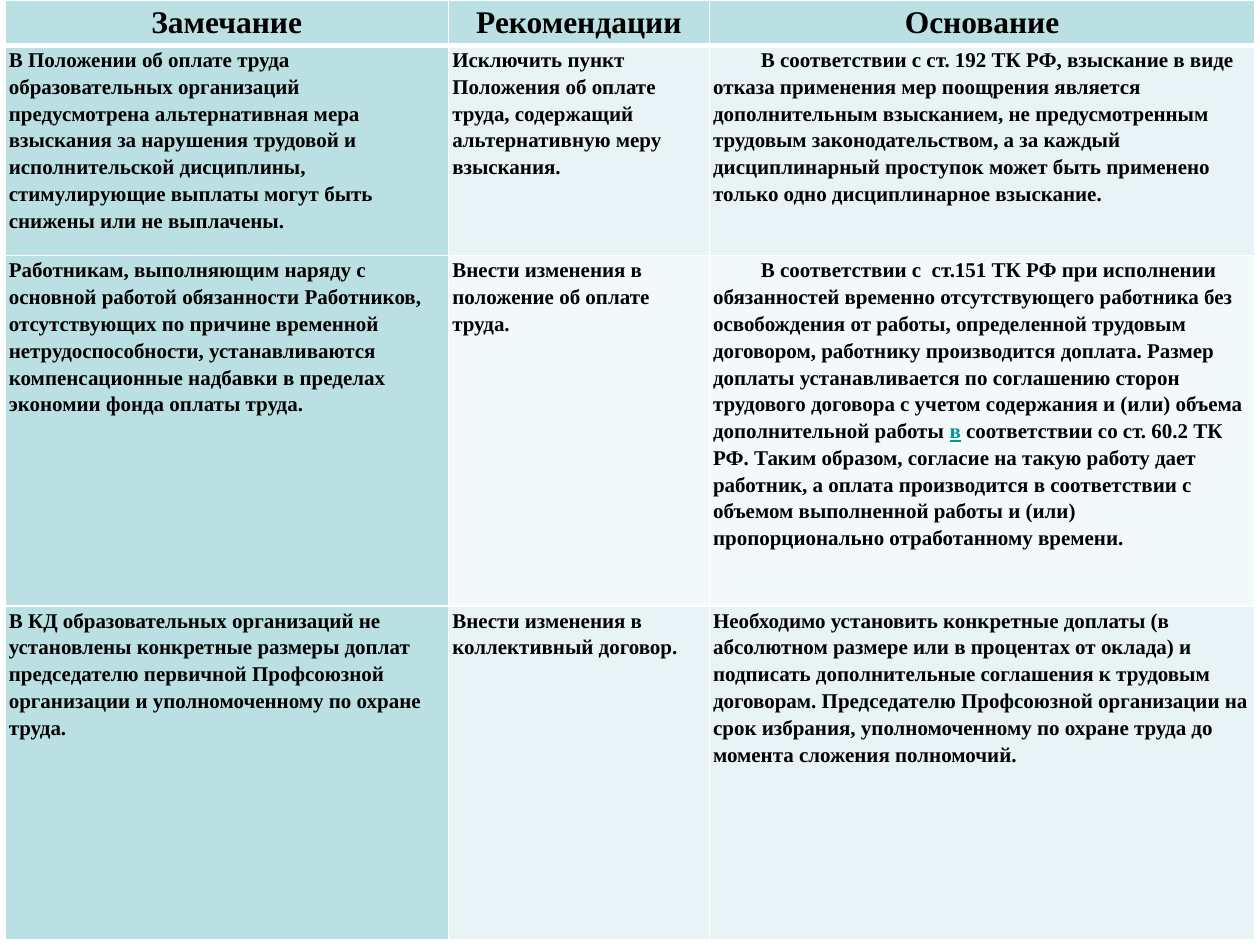
from dataclasses import dataclass

from lxml import etree
from pptx import Presentation
from pptx.dml.color import RGBColor
from pptx.enum.text import PP_ALIGN
from pptx.oxml.ns import qn
from pptx.util import Inches, Pt

CENTER = PP_ALIGN.CENTER
LEFT = PP_ALIGN.LEFT


@dataclass(frozen=True)
class Theme:
    """Colours and type sizes of the slide."""
    font: str = "Times New Roman"
    text: str = "000000"
    reference: str = "009999"
    accent: str = "BBE0E3"
    bands: tuple = ("E7F3F4", "F3F9FA")
    border: str = "FFFFFF"
    header_size: int = 18
    body_size: int = 12
    line_spacing: float = 1.15
    thin: int = 1
    thick: int = 3


THEME = Theme()
COLUMN_WIDTHS = (3.52, 2.07, 4.33)
ROW_HEIGHTS = (0.36, 1.67, 2.78, 2.65)
HEADERS = ("Замечание", "Рекомендации", "Основание")
FIRST_LINE_INDENT = 0.38
INDENTED_CELLS = {(1, 2), (2, 2)}
REMARKS = (
    (
        ("В Положении об оплате труда образовательных организаций предусмотрена "
         "альтернативная мера взыскания за нарушения трудовой и исполнительской "
         "дисциплины, стимулирующие выплаты могут быть снижены или не выплачены.",),
        ("Исключить пункт Положения об оплате труда, содержащий альтернативную "
         "меру взыскания.",),
        ("В соответствии с ст. 192 ТК РФ, взыскание в виде отказа применения мер "
         "поощрения является дополнительным взысканием, не предусмотренным трудовым "
         "законодательством, а за каждый дисциплинарный проступок может быть "
         "применено только одно дисциплинарное взыскание.",),
    ),
    (
        ("Работникам, выполняющим наряду с основной работой обязанности Работников, "
         "отсутствующих по причине временной нетрудоспособности, устанавливаются "
         "компенсационные надбавки в пределах экономии фонда оплаты труда.",),
        ("Внести изменения в положение об оплате труда.",),
        ("В соответствии с  ст.151 ТК РФ при исполнении обязанностей временно "
         "отсутствующего работника без освобождения от работы, определенной трудовым "
         "договором, работнику производится доплата. Размер доплаты устанавливается "
         "по соглашению сторон трудового договора с учетом содержания и (или) объема "
         "дополнительной работы ",
         "в",
         " соответствии со ст. 60.2 ТК РФ. Таким образом, согласие на такую работу "
         "дает работник, а оплата производится в соответствии с объемом выполненной "
         "работы и (или) пропорционально отработанному времени."),
    ),
    (
        ("В КД образовательных организаций не установлены конкретные размеры доплат "
         "председателю первичной Профсоюзной организации и уполномоченному по охране "
         "труда.",),
        ("Внести изменения в коллективный договор.",),
        ("Необходимо установить конкретные доплаты (в абсолютном размере или в "
         "процентах от оклада) и подписать дополнительные соглашения к трудовым "
         "договорам. Председателю Профсоюзной организации на срок избрания, "
         "уполномоченному по охране труда до момента сложения полномочий.",),
    ),
)


def apply_format(target, values):
    """Set each attribute named in values on target."""
    for name, value in values.items():
        setattr(target, name, value)


def set_borders(cell, top, bottom):
    """Draw the four borders of a cell with widths in points."""
    properties = cell._tc.get_or_add_tcPr()
    widths = {"a:lnL": THEME.thin, "a:lnR": THEME.thin, "a:lnT": top, "a:lnB": bottom}
    for tag, width in widths.items():
        line = etree.SubElement(properties, qn(tag), w=str(Pt(width)))
        fill = etree.SubElement(line, qn("a:solidFill"))
        etree.SubElement(fill, qn("a:srgbClr"), val=THEME.border)


def style_cell(cell, row, column):
    """Give a cell its margins, borders and fill."""
    apply_format(cell, {
        "margin_left": Inches(0.03), "margin_right": Inches(0.03),
        "margin_top": 0, "margin_bottom": 0,
    })
    set_borders(cell,
                top=THEME.thick if row == 1 else THEME.thin,
                bottom=THEME.thick if row == 0 else THEME.thin)
    has_accent = row == 0 or column == 0
    color = THEME.accent if has_accent else THEME.bands[(row - 1) % 2]
    cell.fill.solid()
    cell.fill.fore_color.rgb = RGBColor.from_string(color)


def write_cell(cell, runs, size, alignment, indented):
    """Write the runs of a cell, every second one as an underlined reference."""
    paragraph = cell.text_frame.paragraphs[0]
    apply_format(paragraph, {"alignment": alignment, "line_spacing": THEME.line_spacing})
    if indented:
        paragraph.space_after = Pt(10)
        paragraph._p.get_or_add_pPr().set("indent", str(Inches(FIRST_LINE_INDENT)))
    for index, text in enumerate(runs):
        is_reference = index % 2 == 1
        run = paragraph.add_run()
        run.text = text
        apply_format(run.font, {
            "name": THEME.font, "size": Pt(size), "bold": True, "underline": is_reference,
        })
        color = THEME.reference if is_reference else THEME.text
        run.font.color.rgb = RGBColor.from_string(color)


def add_remarks_table(slide):
    """Add the table of remarks, recommendations and grounds."""
    rows = (tuple((header,) for header in HEADERS),) + REMARKS
    table = slide.shapes.add_table(
        len(ROW_HEIGHTS), len(COLUMN_WIDTHS), Inches(0.04), 0,
        Inches(sum(COLUMN_WIDTHS)), Inches(sum(ROW_HEIGHTS))).table
    for column, width in zip(table.columns, COLUMN_WIDTHS):
        column.width = Inches(width)
    for row, height in zip(table.rows, ROW_HEIGHTS):
        row.height = Inches(height)
    for row, contents in enumerate(rows):
        size, alignment = (THEME.body_size, LEFT) if row else (THEME.header_size, CENTER)
        for column, runs in enumerate(contents):
            cell = table.cell(row, column)
            style_cell(cell, row, column)
            write_cell(cell, runs, size, alignment, (row, column) in INDENTED_CELLS)


def main():
    """Build the slide and save the presentation."""
    presentation = Presentation()
    apply_format(presentation, {"slide_width": Inches(10), "slide_height": Inches(7.5)})
    slide = presentation.slides.add_slide(presentation.slide_layouts[6])
    add_remarks_table(slide)
    presentation.save("out.pptx")


if __name__ == "__main__":
    main()
